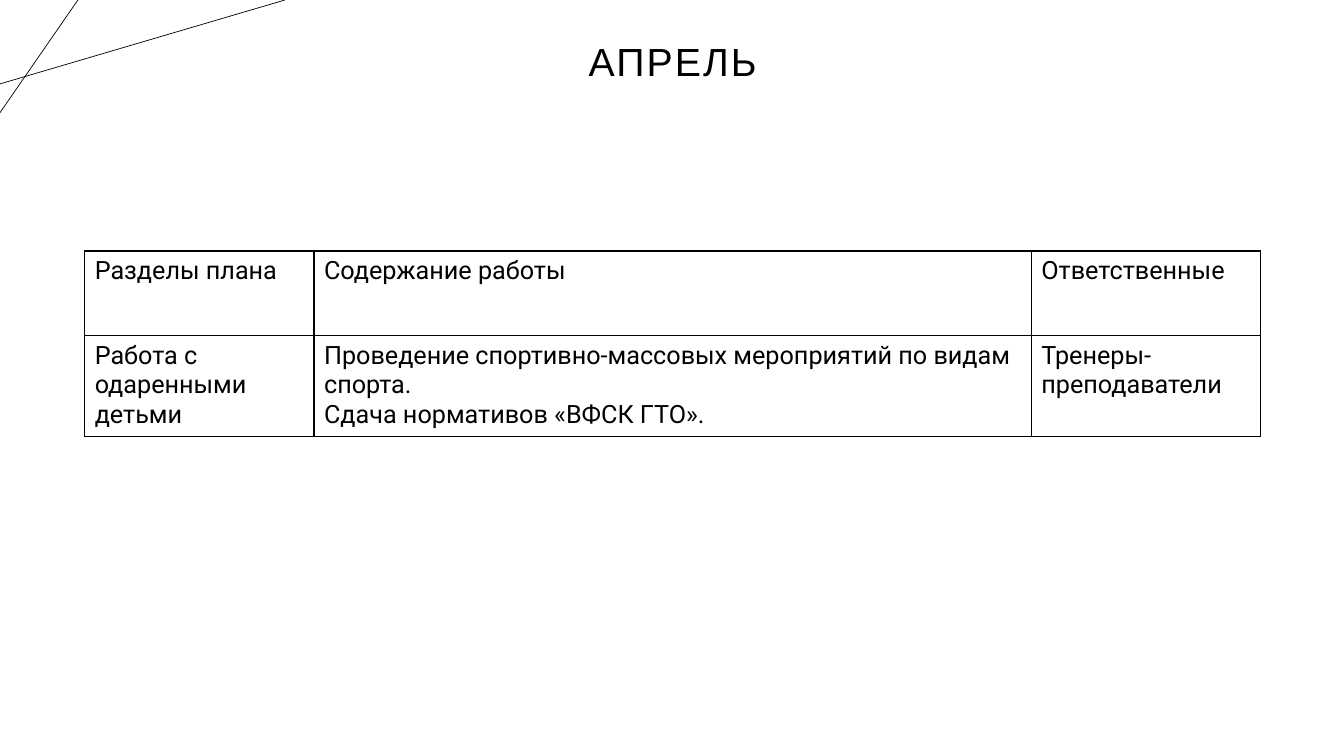
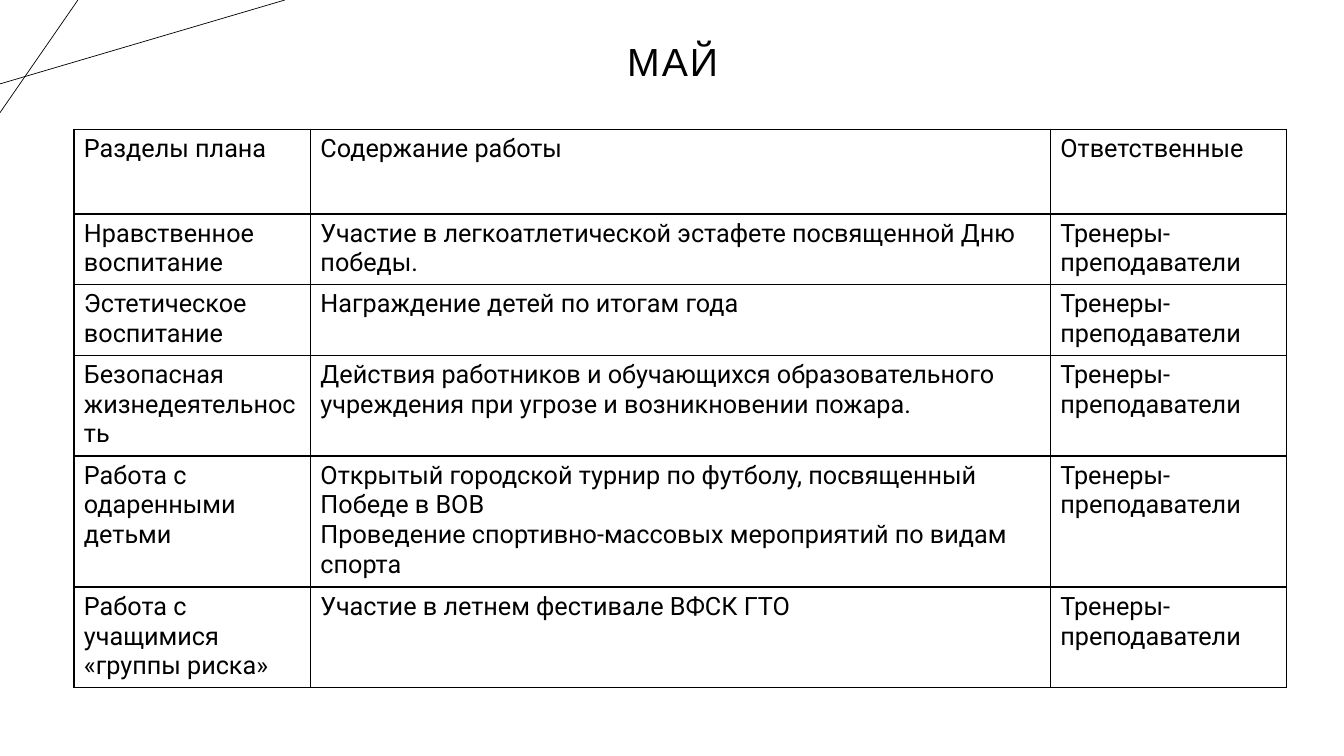
from lxml.etree import SubElement
from pptx import Presentation
from pptx.dml.color import RGBColor
from pptx.enum.shapes import MSO_CONNECTOR
from pptx.enum.text import MSO_ANCHOR, PP_ALIGN
from pptx.oxml import parse_xml
from pptx.oxml.ns import nsdecls, qn
from pptx.util import Inches, Pt

BLACK = RGBColor(0x00, 0x00, 0x00)
TITLE_FONT, TABLE_FONT = "Arial", "Roboto"

# Lengths below are percentages of the slide's width or height
CORNER_LINES = [((0, 11.1), (21.2, 0)), ((5.8, 0), (0, 14.9))]
TITLE_AREA = (6.9, 3.5, 86.3, 9.9)
COLUMN_SHARES = (19.5, 61, 19.5)  # of the table's width
HEADER_HEIGHT = 11.2
LINE_HEIGHT, ROW_PADDING = 4, 1.33

HEADER = ("Разделы плана", "Содержание работы", "Ответственные")
RESPONSIBLE = "Тренеры-преподаватели"

# Each month: title, table left, top and width, then rows of
# (number of text lines, section, contents)
MONTHS = [
    ("АПРЕЛЬ", 6.3, 33.2, 87.5, [
        (3, "Работа с одаренными детьми",
         "Проведение спортивно-массовых мероприятий по видам спорта.\n"
         "Сдача нормативов «ВФСК ГТО»."),
    ]),
    ("МАЙ", 5.5, 17.1, 90.25, [
        (2, "Нравственное воспитание",
         "Участие в легкоатлетической эстафете посвященной Дню победы."),
        (2, "Эстетическое воспитание", "Награждение детей по итогам года"),
        (3, "Безопасная жизнедеятельность",
         "Действия работников и обучающихся образовательного учреждения "
         "при угрозе и возникновении пожара."),
        (4, "Работа с одаренными детьми",
         "Открытый городской турнир по футболу, посвященный Победе в ВОВ\n"
         "Проведение спортивно-массовых мероприятий по видам спорта"),
        (3, "Работа с учащимися «группы риска»",
         "Участие в летнем фестивале ВФСК ГТО"),
    ]),
]

deck = Presentation()
deck.slide_width, deck.slide_height = Inches(13.33), Inches(7.5)
blank_layout = deck.slide_layouts[6]


def across(percent):
    return round(deck.slide_width * percent / 100)


def down(percent):
    return round(deck.slide_height * percent / 100)


for title, left, top, width, plan in MONTHS:
    page = deck.slides.add_slide(blank_layout)

    # Crossing lines in the corner
    for (x1, y1), (x2, y2) in CORNER_LINES:
        line = page.shapes.add_connector(
            MSO_CONNECTOR.STRAIGHT, across(x1), down(y1), across(x2), down(y2))
        line.line.color.rgb = BLACK
        line.line.width = Pt(0.5)
        SubElement(line._element.spPr, qn("a:effectLst"))

    # Month title
    x, y, w, h = TITLE_AREA
    box = page.shapes.add_textbox(across(x), down(y), across(w), down(h))
    frame = box.text_frame
    frame.word_wrap = True
    frame.vertical_anchor = MSO_ANCHOR.MIDDLE
    para = frame.paragraphs[0]
    para.alignment = PP_ALIGN.CENTER
    para.line_spacing = 0.9
    span = para.add_run()
    span.text = title
    span.font.name, span.font.size = TITLE_FONT, Pt(28)
    span.font.color.rgb = BLACK
    span.font._element.set("spc", "150")  # letter spacing, 1.5 pt

    # Plan table
    heights = [HEADER_HEIGHT] + [ROW_PADDING + LINE_HEIGHT * row[0] for row in plan]
    texts = [HEADER] + [(section, contents, RESPONSIBLE) for _, section, contents in plan]
    table = page.shapes.add_table(
        len(texts), len(HEADER), across(left), down(top),
        across(width), down(sum(heights))).table
    table.first_row = table.horz_banding = False
    for column, share in zip(table.columns, COLUMN_SHARES):
        column.width = across(width * share / 100)
    for row, height, row_texts in zip(table.rows, heights, texts):
        row.height = down(height)
        for cell, text in zip(row.cells, row_texts):
            cell.text = text
            cell.fill.background()
            for para in cell.text_frame.paragraphs:
                para.font.name, para.font.size = TABLE_FONT, Pt(18)
                para.font.color.rgb = BLACK
            # Borders stand before the fill in the cell's properties
            properties = cell._tc.get_or_add_tcPr()
            for position, side in enumerate(("lnL", "lnR", "lnT", "lnB")):
                properties.insert(position, parse_xml(
                    f'<a:{side} {nsdecls("a")} w="{Pt(1)}"><a:solidFill>'
                    f'<a:srgbClr val="{BLACK}"/></a:solidFill></a:{side}>'))

deck.save("out.pptx")
